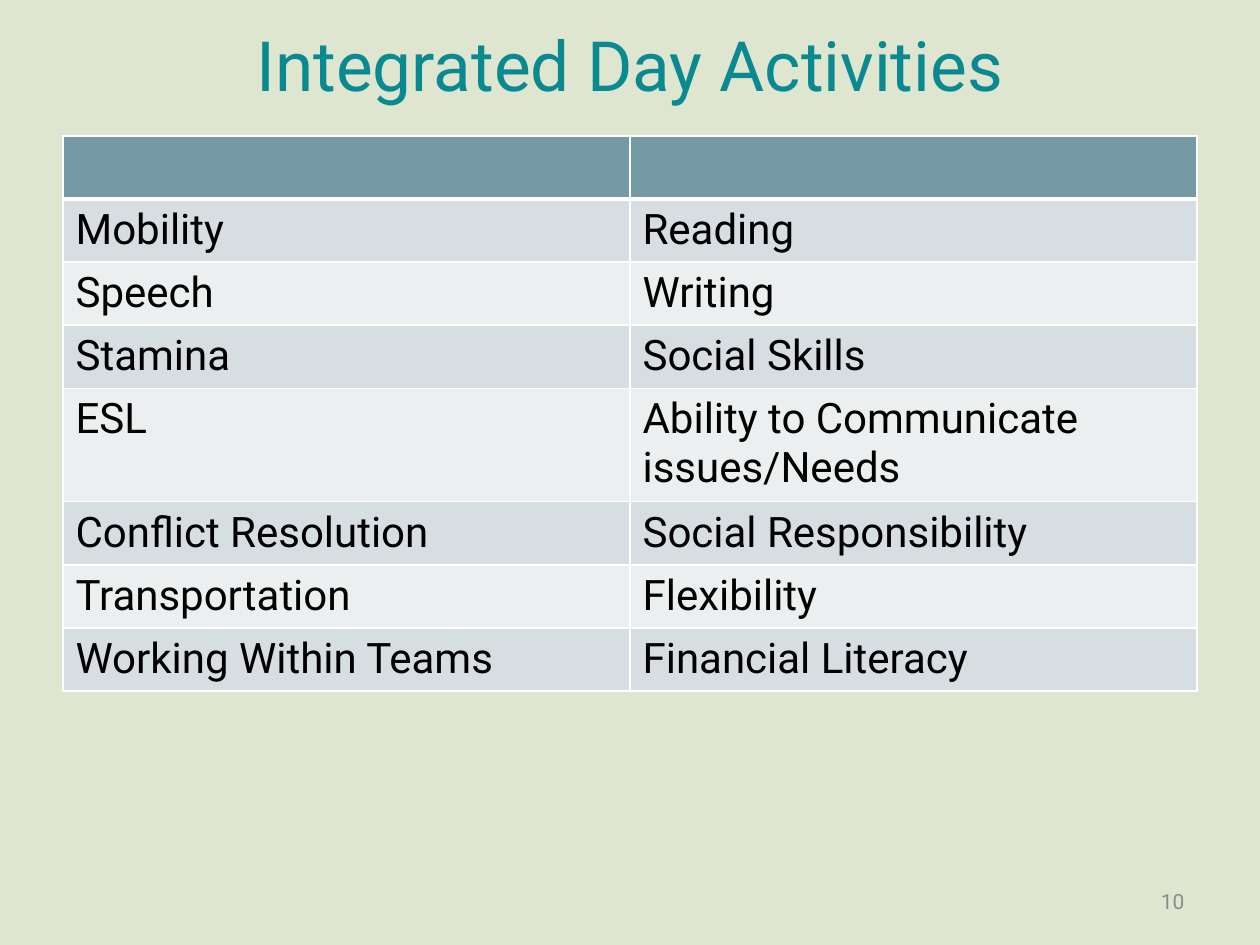
from pptx import Presentation
from pptx.dml.color import RGBColor
from pptx.enum.text import MSO_ANCHOR, PP_ALIGN
from pptx.oxml.ns import qn
from pptx.util import Inches, Pt
from lxml.etree import SubElement

SAGE = RGBColor(0xDF, 0xE6, 0xD0)
TEAL = RGBColor(0x0A, 0x8A, 0x90)
SLATE = RGBColor(0x75, 0x9A, 0xA5)
MIST = RGBColor(0xD6, 0xDE, 0xE1)
PALE = RGBColor(0xEC, 0xEF, 0xF0)
WHITE = RGBColor(0xFF, 0xFF, 0xFF)
BLACK = RGBColor(0x00, 0x00, 0x00)
GRAY = RGBColor(0x8C, 0x8C, 0x8C)


def style(para, size, color):
    para.font.name = "Roboto"
    para.font.size = Pt(size)
    para.font.color.rgb = color


def label(left, top, width, height, text, size, color, align):
    box = slide.shapes.add_textbox(Inches(left), Inches(top), Inches(width), Inches(height))
    frame = box.text_frame
    frame.word_wrap = True
    frame.vertical_anchor = MSO_ANCHOR.MIDDLE
    para = frame.paragraphs[0]
    para.text = text
    para.alignment = align
    style(para, size, color)


deck = Presentation()
deck.slide_width = Inches(10)
deck.slide_height = Inches(7.5)
slide = deck.slides.add_slide(deck.slide_layouts[6])
slide.background.fill.solid()
slide.background.fill.fore_color.rgb = SAGE

label(0.5, 0.19, 9, 0.64, "Integrated Day Activities", 39.6, TEAL, PP_ALIGN.CENTER)

rows = [
    ("", ""),
    ("Mobility", "Reading"),
    ("Speech", "Writing"),
    ("Stamina", "Social Skills"),
    ("ESL", "Ability to Communicate issues/Needs"),
    ("Conflict Resolution", "Social Responsibility"),
    ("Transportation", "Flexibility"),
    ("Working Within Teams", "Financial Literacy"),
]
highs = [0.88 if pair[0] == "ESL" else 0.49 for pair in rows]
table = slide.shapes.add_table(
    len(rows), 2, Inches(0.5), Inches(1.08), Inches(9), Inches(sum(highs))
).table

for r, pair in enumerate(rows):
    table.rows[r].height = Inches(highs[r])
    for c, text in enumerate(pair):
        cell = table.cell(r, c)
        props = cell._tc.get_or_add_tcPr()
        for side in ("lnL", "lnR", "lnT", "lnB"):
            thick = (side, r) in (("lnB", 0), ("lnT", 1))
            line = SubElement(props, qn("a:" + side), w=str(Pt(3 if thick else 1)))
            fill = SubElement(line, qn("a:solidFill"))
            SubElement(fill, qn("a:srgbClr"), val=str(WHITE))
        cell.fill.solid()
        cell.fill.fore_color.rgb = SLATE if r == 0 else MIST if r % 2 else PALE
        para = cell.text_frame.paragraphs[0]
        para.text = text
        style(para, 24, BLACK)

label(7.17, 6.95, 2.33, 0.4, "10", 12, GRAY, PP_ALIGN.RIGHT)

deck.save("out.pptx")
